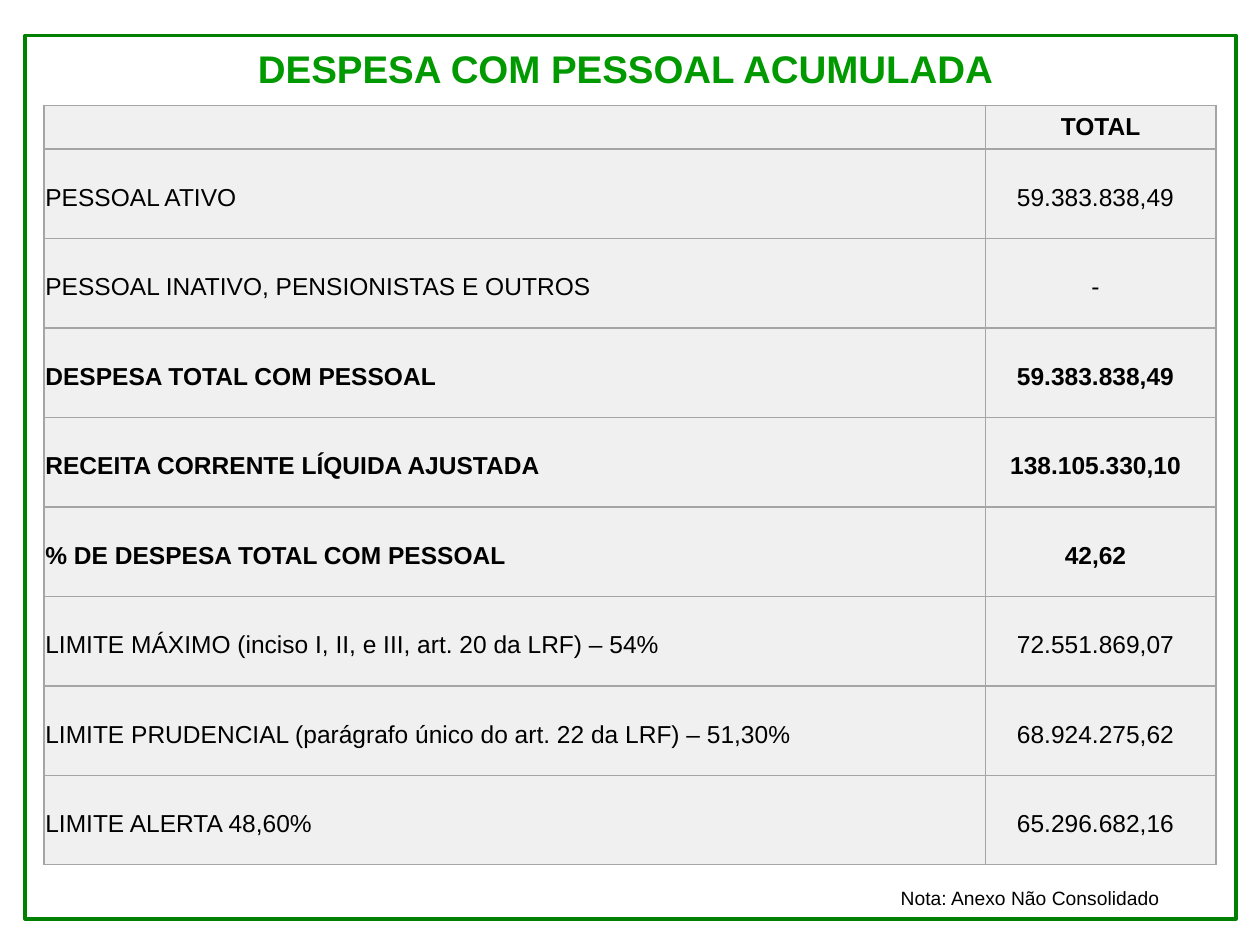
import dataclasses

import lxml.etree
import pptx
import pptx.dml.color
import pptx.enum.shapes
import pptx.enum.text
import pptx.oxml.ns
import pptx.util

ALIGN = pptx.enum.text.PP_ALIGN
ANCHOR = pptx.enum.text.MSO_ANCHOR


@dataclasses.dataclass(frozen=True)
class Theme:
    font: str = "Arial"
    frame: str = "008000"
    title: str = "009900"
    text: str = "000000"
    cell: str = "F0F0F0"
    border: str = "A5A5A5"
    title_size: float = 22
    table_size: float = 14
    note_size: float = 11


def rgb(value):
    return pptx.dml.color.RGBColor.from_string(value)


def apply(target, values):
    for name, value in values.items():
        setattr(target, name, value)


class SlideBuilder:
    """Places styled elements on a slide, in percent of its width and height."""

    def __init__(self, deck, theme):
        self.deck = deck
        self.theme = theme
        self.page = deck.slides.add_slide(deck.slide_layouts[6])

    def across(self, share):
        return round(self.deck.slide_width * share / 100)

    def down(self, share):
        return round(self.deck.slide_height * share / 100)

    def area(self, left, top, width, height):
        return self.across(left), self.down(top), self.across(width), self.down(height)

    def add_span(self, para, text, size, color, bold=False, align=ALIGN.LEFT):
        para.alignment = align
        span = para.add_run()
        span.text = text
        apply(span.font, {"name": self.theme.font, "size": pptx.util.Pt(size), "bold": bold})
        span.font.color.rgb = rgb(color)

    def frame(self, *place):
        box = self.page.shapes.add_shape(
            pptx.enum.shapes.MSO_SHAPE.RECTANGLE, *self.area(*place))
        box.shadow.inherit = False
        box.fill.background()
        box.line.color.rgb = rgb(self.theme.frame)
        box.line.width = pptx.util.Pt(2)

    def text(self, place, text, size, color, anchor=ANCHOR.TOP, **style):
        box = self.page.shapes.add_textbox(*self.area(*place))
        apply(box.text_frame, {"word_wrap": True, "vertical_anchor": anchor})
        self.add_span(box.text_frame.paragraphs[0], text, size, color, **style)

    def border(self, cell):
        properties = cell._tc.get_or_add_tcPr()
        for index, side in enumerate(("lnL", "lnR", "lnT", "lnB")):
            line = lxml.etree.Element(pptx.oxml.ns.qn(f"a:{side}"), w=str(pptx.util.Pt(1)))
            fill = lxml.etree.SubElement(line, pptx.oxml.ns.qn("a:solidFill"))
            lxml.etree.SubElement(fill, pptx.oxml.ns.qn("a:srgbClr"), val=self.theme.border)
            properties.insert(index, line)

    def cell(self, cell, text, bold, align, margins):
        apply(cell, {"vertical_anchor": ANCHOR.MIDDLE, **margins})
        cell.fill.solid()
        cell.fill.fore_color.rgb = rgb(self.theme.cell)
        self.border(cell)
        para = cell.text_frame.paragraphs[0]
        if text:
            self.add_span(para, text, self.theme.table_size, self.theme.text, bold, align)
        else:
            para.font.size = pptx.util.Pt(self.theme.table_size)

    def table(self, place, widths, header_height, rows):
        table = self.page.shapes.add_table(len(rows), len(widths), *self.area(*place)).table
        apply(table, {"first_row": False, "horz_banding": False})
        for column, width in zip(table.columns, widths):
            column.width = self.across(width)
        body_height = (place[3] - header_height) / (len(rows) - 1)
        inch = pptx.util.Inches
        head = dict.fromkeys(
            ("margin_left", "margin_top", "margin_right", "margin_bottom"), inch(0.01))
        body = {**head, "margin_top": inch(0.07), "margin_right": inch(0.09),
                "margin_bottom": 0}
        for index, (label, value, bold) in enumerate(rows):
            table.rows[index].height = self.down(body_height if index else header_height)
            margins = body if index else head
            self.cell(table.cell(index, 0), label, bold, ALIGN.JUSTIFY, margins)
            self.cell(table.cell(index, 1), value, bold, ALIGN.CENTER, margins)


# Label, total, bold
EXPENSES = [
    ("", "TOTAL", True),
    ("PESSOAL ATIVO", "59.383.838,49", False),
    ("PESSOAL INATIVO, PENSIONISTAS E OUTROS", "-", False),
    ("DESPESA TOTAL COM PESSOAL", "59.383.838,49", True),
    ("RECEITA CORRENTE LÍQUIDA AJUSTADA", "138.105.330,10", True),
    ("% DE DESPESA TOTAL COM PESSOAL", "42,62", True),
    ("LIMITE MÁXIMO (inciso I, II, e III, art. 20 da LRF) – 54%", "72.551.869,07", False),
    ("LIMITE PRUDENCIAL (parágrafo único do art. 22 da LRF) – 51,30%",
     "68.924.275,62", False),
    ("LIMITE ALERTA 48,60%", "65.296.682,16", False),
]


def main():
    deck = pptx.Presentation()
    apply(deck, {"slide_width": pptx.util.Inches(10), "slide_height": pptx.util.Inches(7.5)})
    theme = Theme()
    slide = SlideBuilder(deck, theme)

    # Green frame and title
    slide.frame(2, 3.75, 96.1, 93.5)
    slide.text((9.1, 0, 81.1, 10.3), "DESPESA COM PESSOAL ACUMULADA", theme.title_size,
               theme.title, ANCHOR.BOTTOM, bold=True, align=ALIGN.CENTER)

    # Expense table
    slide.table((3.5, 11.15, 93, 80.4), (74.7, 18.3), 4.6, EXPENSES)

    # Note
    slide.text((70.5, 93.1, 26, 3.9), "Nota: Anexo Não Consolidado", theme.note_size,
               theme.text)

    deck.save("out.pptx")


if __name__ == "__main__":
    main()
